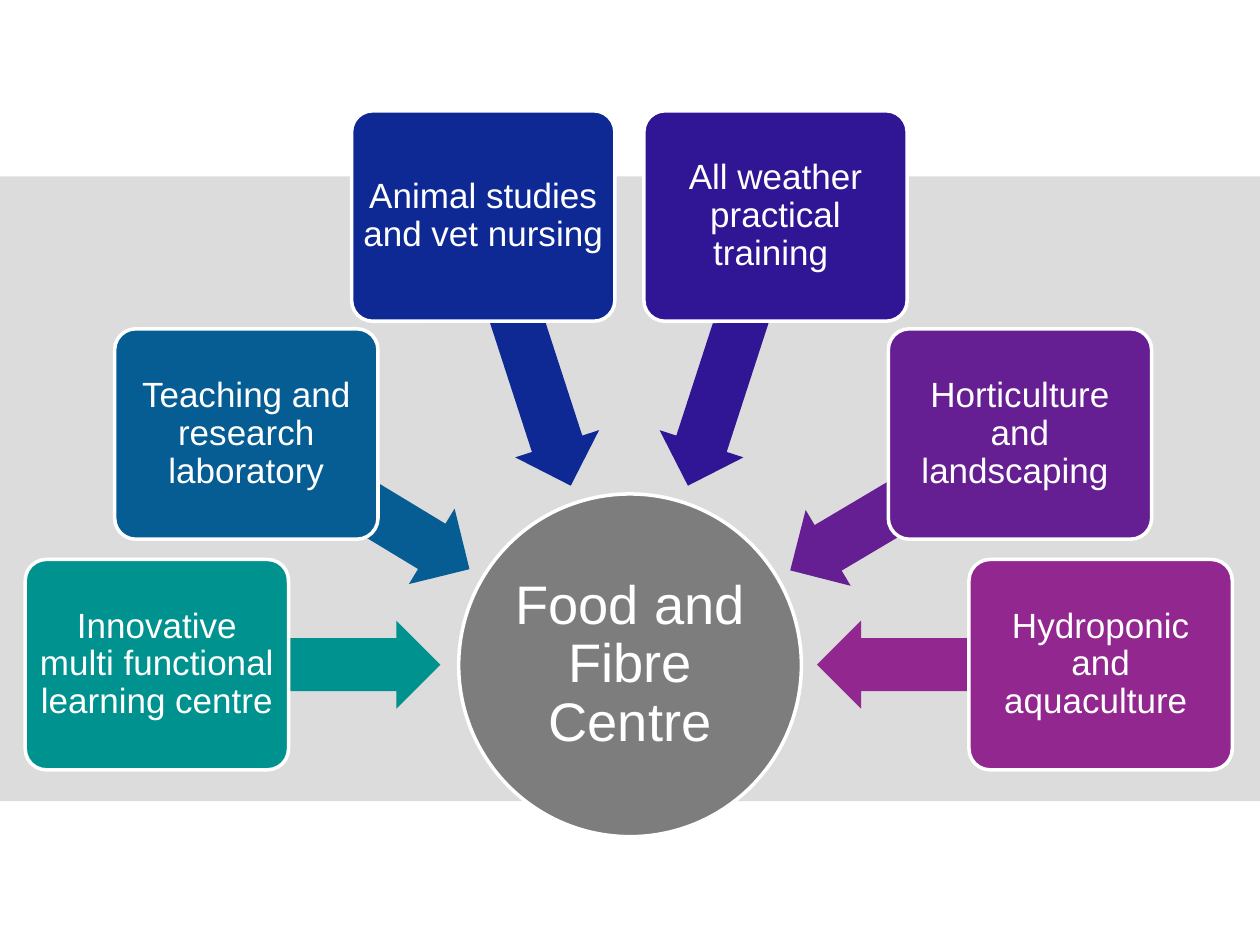
import math

import pptx
import pptx.dml.color
import pptx.enum.shapes
import pptx.enum.text
import pptx.util

Inches = pptx.util.Inches
Shape = pptx.enum.shapes.MSO_SHAPE

COLORS = {
    "band": "DCDCDC",
    "hub": "7D7D7D",
    "white": "FFFFFF",
    "teal": "00928F",
    "blue": "065D93",
    "navy": "0E2994",
    "indigo": "301594",
    "purple": "661E93",
    "magenta": "92278F",
}

HUB_TEXT = "Food and Fibre Centre"
FACILITIES = [
    ("Innovative multi functional learning centre", "teal", 0.2, 4.44, 180, 2.25),
    ("Teaching and research laboratory", "blue", 0.91, 2.61, 211.2, 2.07),
    ("Animal studies and vet nursing ", "navy", 2.79, 0.88, 252, 2.25),
    ("All weather practical training ", "indigo", 5.11, 0.88, 288, 2.25),
    ("Horticulture and landscaping ", "purple", 7.05, 2.61, 329.3, 2.12),
    ("Hydroponic and aquaculture ", "magenta", 7.69, 4.44, 0, 2.25),
]
BOX_WIDTH, BOX_HEIGHT = 2.09, 1.67
ARROW_HEIGHT = 0.7


def rgb(name):
    return pptx.dml.color.RGBColor.from_string(COLORS[name])


def add_filled(shapes, kind, left, top, width, height, color, outlined=False):
    shape = shapes.add_shape(kind, Inches(left), Inches(top), Inches(width), Inches(height))
    shape.shadow.inherit = False
    shape.fill.solid()
    shape.fill.fore_color.rgb = rgb(color)
    if outlined:
        shape.line.color.rgb = rgb("white")
        shape.line.width = pptx.util.Pt(2)
    else:
        shape.line.fill.background()
    return shape


def write_label(shape, text, size, inset):
    frame = shape.text_frame
    frame.word_wrap = True
    frame.vertical_anchor = pptx.enum.text.MSO_ANCHOR.MIDDLE
    frame.margin_left = frame.margin_right = Inches(inset)
    frame.margin_top = frame.margin_bottom = Inches(inset)
    paragraph = frame.paragraphs[0]
    paragraph.alignment = pptx.enum.text.PP_ALIGN.CENTER
    paragraph.line_spacing = 0.9
    run = paragraph.add_run()
    run.text = text
    run.font.name = "Arial"
    run.font.size = pptx.util.Pt(size)
    run.font.color.rgb = rgb("white")


def add_facility(shapes, text, color, left, top, angle, length):
    radians = math.radians(angle)
    center_x = left + BOX_WIDTH / 2 - length / 2 * math.cos(radians)
    center_y = top + BOX_HEIGHT / 2 - length / 2 * math.sin(radians)
    arrow = add_filled(shapes, Shape.LEFT_ARROW, center_x - length / 2,
                       center_y - ARROW_HEIGHT / 2, length, ARROW_HEIGHT, color)
    arrow.adjustments[0] = 0.6
    arrow.adjustments[1] = 0.5
    arrow.rotation = angle

    box = add_filled(shapes, Shape.ROUNDED_RECTANGLE, left, top,
                     BOX_WIDTH, BOX_HEIGHT, color, outlined=True)
    box.adjustments[0] = 0.1
    write_label(box, text, 20, 0.04)


def main():
    presentation = pptx.Presentation()
    presentation.slide_width = Inches(10)
    presentation.slide_height = Inches(7.5)
    slide = presentation.slides.add_slide(presentation.slide_layouts[6])

    add_filled(slide.shapes, Shape.RECTANGLE, 0, 1.4, 10, 4.96, "band")
    diagram = slide.shapes.add_group_shape()
    hub = add_filled(diagram.shapes, Shape.OVAL, 3.64, 3.92, 2.72, 2.72, "hub", outlined=True)
    write_label(hub, HUB_TEXT, 31, 0.02)
    for facility in FACILITIES:
        add_facility(diagram.shapes, *facility)

    presentation.save("out.pptx")


if __name__ == "__main__":
    main()
